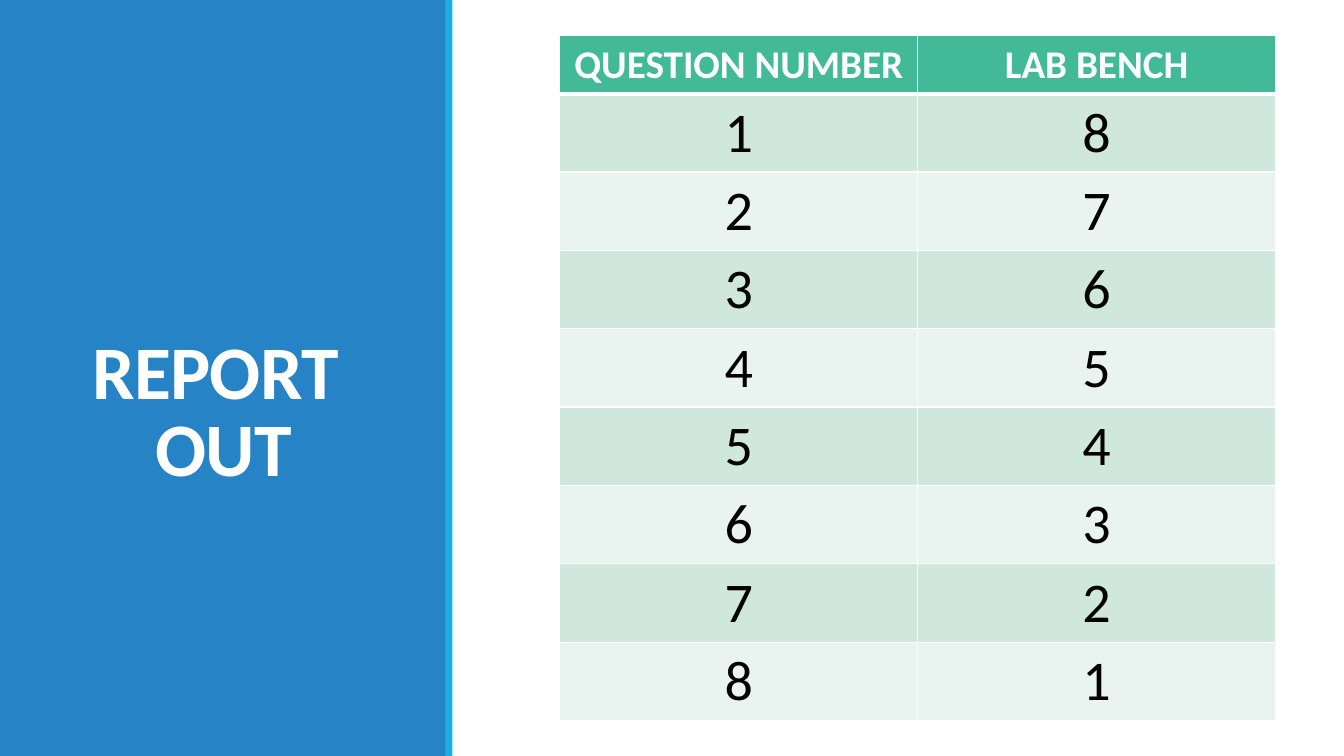
from dataclasses import dataclass

from lxml import etree
from pptx import Presentation
from pptx.dml.color import RGBColor
from pptx.enum.shapes import MSO_SHAPE
from pptx.enum.text import MSO_ANCHOR, MSO_AUTO_SIZE, PP_ALIGN
from pptx.oxml.ns import qn
from pptx.slide import Slide
from pptx.table import _Cell
from pptx.util import Pt

RECTANGLE = MSO_SHAPE.RECTANGLE
CENTER = PP_ALIGN.CENTER
MIDDLE = MSO_ANCHOR.MIDDLE
NO_AUTOFIT = MSO_AUTO_SIZE.NONE
TITLE_ONLY = 5


@dataclass(frozen=True)
class Theme:
    font: str = "Calibri"
    panel: str = "2683C6"
    stripe: str = "1CADE4"
    header: str = "42BA97"
    bands: tuple[str, str] = ("CFE7DD", "E9F3EF")
    light: str = "FFFFFF"
    dark: str = "000000"
    title_size: float = 54
    header_size: float = 28
    body_size: float = 40


@dataclass(frozen=True)
class Box:
    left: float
    top: float
    width: float
    height: float

    def lengths(self) -> tuple[Pt, Pt, Pt, Pt]:
        return Pt(self.left), Pt(self.top), Pt(self.width), Pt(self.height)


@dataclass(frozen=True)
class Panel:
    box: Box
    color: str


@dataclass(frozen=True)
class CellStyle:
    fill: str
    color: str
    size: float
    bold: bool
    bottom_line: float


THEME = Theme()
PANELS = (
    Panel(Box(0, 0, 319, 540), THEME.panel),
    Panel(Box(318.2, 0, 5.04, 540), THEME.stripe),
)
TITLE_BOX = Box(7.2, 46.8, 305.3, 499)
HEADER_HEIGHT, ROW_HEIGHT = 40.7, 55.9
QUESTIONS = 8
ROWS = [("QUESTION NUMBER", "LAB BENCH")] + [
    (str(number), str(QUESTIONS + 1 - number)) for number in range(1, QUESTIONS + 1)
]
TABLE_BOX = Box(399.9, 25.5, 511.2, HEADER_HEIGHT + QUESTIONS * ROW_HEIGHT)


def add_panel(page: Slide, panel: Panel) -> None:
    shape = page.shapes.add_shape(RECTANGLE, *panel.box.lengths())
    shape.shadow.inherit = False
    shape.fill.solid()
    shape.fill.fore_color.rgb = RGBColor.from_string(panel.color)
    shape.line.fill.background()


def format_title(page: Slide, text: str) -> None:
    title = page.shapes.title
    title.left, title.top, title.width, title.height = TITLE_BOX.lengths()
    # Bring the title in front of the panels
    page.shapes.element.append(title.element)
    frame = title.text_frame
    frame.text = text
    frame.word_wrap = True
    frame.auto_size = NO_AUTOFIT
    frame.vertical_anchor = MIDDLE
    para = frame.paragraphs[0]
    para.alignment = CENTER
    para.line_spacing = 0.85
    para.font.name = THEME.font
    para.font.size = Pt(THEME.title_size)
    para.font.bold = True
    para.font.color.rgb = RGBColor.from_string(THEME.light)
    # Tighten the letter spacing by half a point
    for span in para.runs:
        span._r.get_or_add_rPr().set("spc", "-50")


def add_borders(cell: _Cell, bottom_line: float) -> None:
    properties = cell._tc.get_or_add_tcPr()
    widths = {"a:lnL": 1, "a:lnR": 1, "a:lnT": 1, "a:lnB": bottom_line}
    for position, (tag, width) in enumerate(widths.items()):
        line = etree.Element(qn(tag), w=str(Pt(width)))
        fill = etree.SubElement(line, qn("a:solidFill"))
        etree.SubElement(fill, qn("a:srgbClr"), val=THEME.light)
        properties.insert(position, line)


def format_cell(cell: _Cell, text: str, style: CellStyle) -> None:
    cell.text = text
    cell.fill.solid()
    cell.fill.fore_color.rgb = RGBColor.from_string(style.fill)
    para = cell.text_frame.paragraphs[0]
    para.alignment = CENTER
    para.font.name = THEME.font
    para.font.size = Pt(style.size)
    para.font.bold = style.bold
    para.font.color.rgb = RGBColor.from_string(style.color)
    add_borders(cell, style.bottom_line)


def add_bench_table(page: Slide) -> None:
    frame = page.shapes.add_table(len(ROWS), len(ROWS[0]), *TABLE_BOX.lengths())
    table = frame.table
    header = CellStyle(THEME.header, THEME.light, THEME.header_size, True, 3)
    body = [
        CellStyle(band, THEME.dark, THEME.body_size, False, 1) for band in THEME.bands
    ]
    for index, values in enumerate(ROWS):
        table.rows[index].height = Pt(ROW_HEIGHT if index else HEADER_HEIGHT)
        style = body[(index - 1) % len(body)] if index else header
        for column, text in enumerate(values):
            format_cell(table.cell(index, column), text, style)


def main() -> None:
    deck = Presentation()
    deck.slide_width, deck.slide_height = Pt(960), Pt(540)
    page = deck.slides.add_slide(deck.slide_layouts[TITLE_ONLY])

    # Left side: coloured panels and title
    for panel in PANELS:
        add_panel(page, panel)
    format_title(page, "REPORT \vOUT")

    # Right side: which bench reports on which question
    add_bench_table(page)

    deck.save("out.pptx")


if __name__ == "__main__":
    main()
